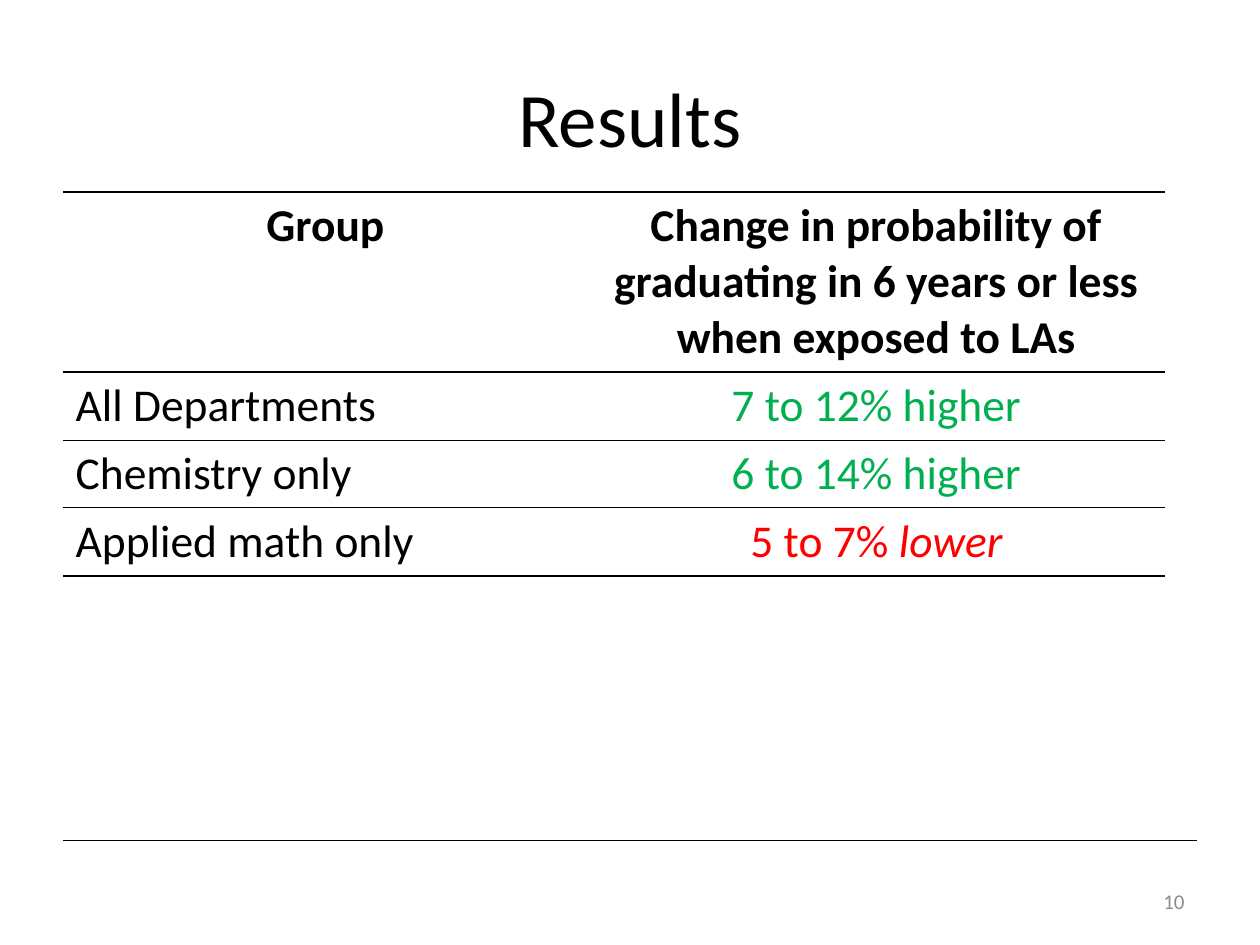
import lxml.etree
import pptx
import pptx.dml.color
import pptx.enum.shapes
import pptx.enum.text
import pptx.oxml.ns
import pptx.util

PIXELS_PER_INCH = 126
FONT = "Calibri"
COLORS = {"black": "000000", "gray": "8C8C8C", "green": "00B050", "red": "FF0000"}
NO_STYLE = "{2D5ABB26-0587-4C30-8999-92F81FD0307C}"
ALIGN = pptx.enum.text.PP_ALIGN

HEADERS = ["Group", "Change in probability of graduating in 6 years or less when exposed to LAs"]
# Group, change, emphasised ending, colour of the change
RESULTS = [
    ("All Departments", "7 to 12% higher", "", "green"),
    ("Chemistry only", "6 to 14% higher", "", "green"),
    ("Applied math only", "5 to 7% ", "lower", "red"),
]
COLUMN_WIDTHS = [525, 577]
HEADER_HEIGHT = 180
ROW_HEIGHT = 68
RULED_ROWS = {0: 1, 1: 0.5, 3: 1}  # row: points of the rule below it


def px(length):
    return pptx.util.Emu(round(length * 914400 / PIXELS_PER_INCH))


def rgb(name):
    return pptx.dml.color.RGBColor.from_string(COLORS[name])


def add_run(paragraph, text, size, color="black", bold=False, italic=False):
    run = paragraph.add_run()
    run.text = text
    run.font.name = FONT
    run.font.size = pptx.util.Pt(size)
    run.font.bold = bold
    run.font.italic = italic
    run.font.color.rgb = rgb(color)


def add_label(slide, box, text, size, alignment, color="black"):
    shape = slide.shapes.add_textbox(*map(px, box))
    frame = shape.text_frame
    frame.word_wrap = True
    frame.vertical_anchor = pptx.enum.text.MSO_ANCHOR.MIDDLE
    paragraph = frame.paragraphs[0]
    paragraph.alignment = alignment
    add_run(paragraph, text, size, color)


def add_footer(slide, box, number):
    """Draw the rule along the top of the box and the page number at its right."""
    left, top, width, height = box
    rule = slide.shapes.add_connector(
        pptx.enum.shapes.MSO_CONNECTOR.STRAIGHT,
        px(left), px(top), px(left + width), px(top))
    rule.line.color.rgb = rgb("black")
    rule.line.width = pptx.util.Pt(0.5)
    lxml.etree.SubElement(rule._element.spPr, pptx.oxml.ns.qn("a:effectLst"))
    number_width, number_height = 294, 50
    number_box = (left + width - number_width, top + height - number_height,
                  number_width, number_height)
    add_label(slide, number_box, number, 12, ALIGN.RIGHT, "gray")


def set_border(cell, side, points):
    properties = cell._tc.get_or_add_tcPr()
    line = lxml.etree.Element(pptx.oxml.ns.qn(f"a:{side}"), w=str(pptx.util.Pt(points)))
    fill = lxml.etree.SubElement(line, pptx.oxml.ns.qn("a:solidFill"))
    lxml.etree.SubElement(fill, pptx.oxml.ns.qn("a:srgbClr"), val=COLORS["black"])
    borders = [child for child in properties if child.tag.split("}")[1].startswith("ln")]
    properties.insert(len(borders), line)


def add_results_table(slide, left, top):
    height = HEADER_HEIGHT + ROW_HEIGHT * len(RESULTS)
    table = slide.shapes.add_table(
        len(RESULTS) + 1, len(HEADERS),
        px(left), px(top), px(sum(COLUMN_WIDTHS)), px(height)).table
    table.first_row = False
    table.horz_banding = False
    table._tbl.tblPr.find(pptx.oxml.ns.qn("a:tableStyleId")).text = NO_STYLE
    for column, width in zip(table.columns, COLUMN_WIDTHS):
        column.width = px(width)

    for row_index, row in enumerate(table.rows):
        row.height = px(ROW_HEIGHT if row_index else HEADER_HEIGHT)
        for cell in row.cells:
            cell.fill.background()
            if row_index == 0:
                set_border(cell, "lnT", 1)
            else:
                above = RULED_ROWS.get(row_index - 1)
                if above:
                    set_border(cell, "lnT", above)
            if row_index in RULED_ROWS:
                set_border(cell, "lnB", RULED_ROWS[row_index])

    for column_index, header in enumerate(HEADERS):
        paragraph = table.cell(0, column_index).text_frame.paragraphs[0]
        paragraph.alignment = ALIGN.CENTER
        add_run(paragraph, header, 26, bold=True)
    for row_index, (group, change, emphasis, color) in enumerate(RESULTS, start=1):
        add_run(table.cell(row_index, 0).text_frame.paragraphs[0], group, 26)
        paragraph = table.cell(row_index, 1).text_frame.paragraphs[0]
        paragraph.alignment = ALIGN.CENTER
        add_run(paragraph, change, 26, color)
        if emphasis:
            add_run(paragraph, emphasis, 26, color, italic=True)


def main():
    presentation = pptx.Presentation()
    presentation.slide_width = px(1260)
    presentation.slide_height = px(945)
    slide = presentation.slides.add_slide(presentation.slide_layouts[6])
    add_footer(slide, (63, 840, 1134, 86), "10")
    add_label(slide, (63, 38, 1134, 158), "Results", 44, ALIGN.CENTER)
    add_results_table(slide, 63, 192)
    presentation.save("out.pptx")


if __name__ == "__main__":
    main()
